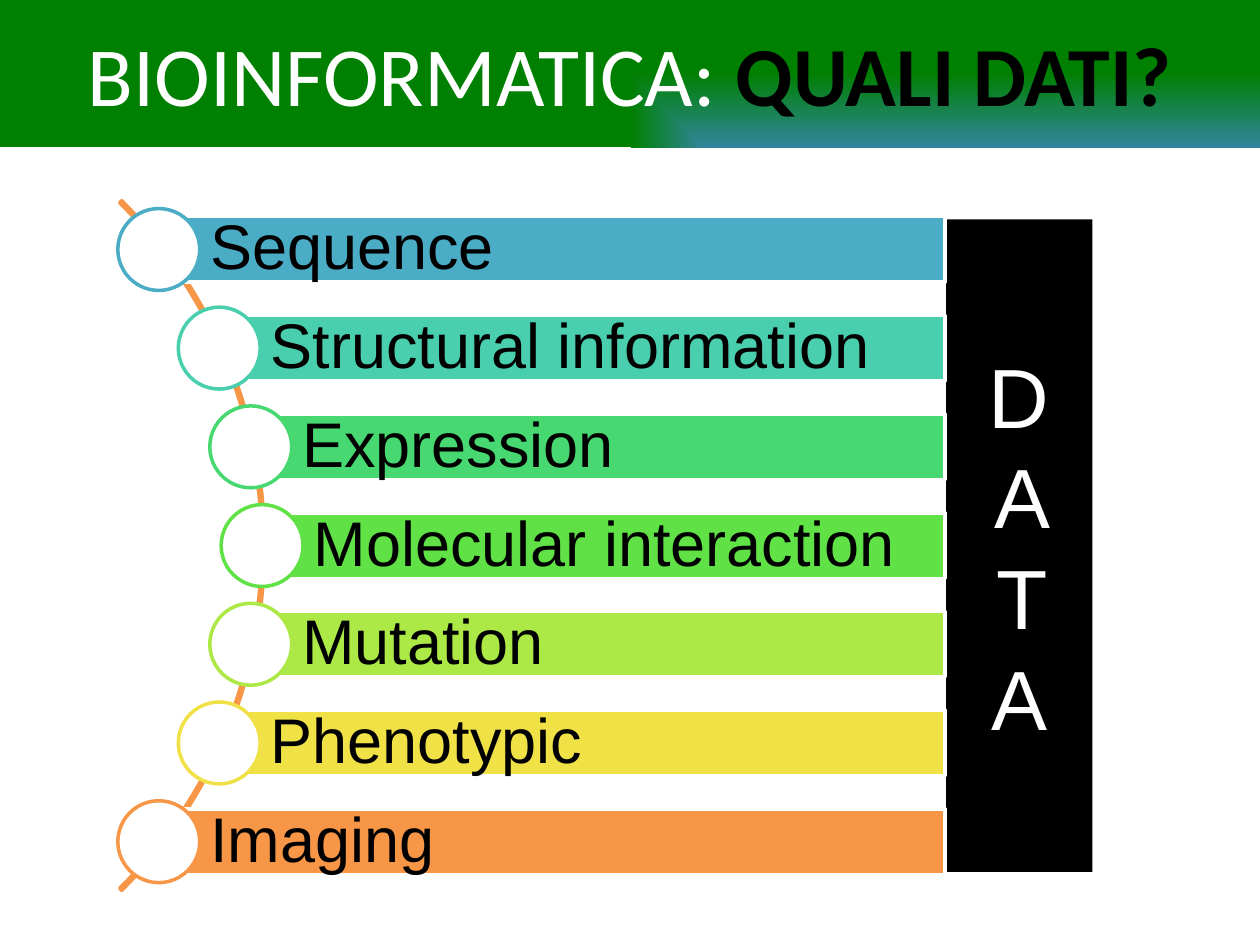
from pptx import Presentation
from pptx.util import Inches, Pt
from pptx.dml.color import RGBColor
from pptx.enum.shapes import MSO_SHAPE
from pptx.enum.text import MSO_ANCHOR, PP_ALIGN
from pptx.oxml import parse_xml
from pptx.oxml.ns import nsdecls, qn

RECT, OVAL, ARC = MSO_SHAPE.RECTANGLE, MSO_SHAPE.OVAL, MSO_SHAPE.BLOCK_ARC
MIDDLE = MSO_ANCHOR.MIDDLE
CENTER, LEFT = PP_ALIGN.CENTER, PP_ALIGN.LEFT

WHITE = RGBColor(0xFF, 0xFF, 0xFF)
BLACK = RGBColor(0x00, 0x00, 0x00)
TEAL = RGBColor(0x31, 0x85, 0x9C)
GREEN = RGBColor(0x00, 0x80, 0x00)
ORANGE = RGBColor(0xF7, 0x96, 0x46)

W, H = 10, 7.5
ROW_TOP, ROW_STEP = 1.98, 4.7 / 6
BAR_RIGHT, BAR_H, DOT = 7.5, 0.52, 0.65
ARC_D = 7.74

ROWS = [
    ("Sequence", 1.26, RGBColor(0x4B, 0xAC, 0xC6)),
    ("Structural information", 1.74, RGBColor(0x49, 0xCF, 0xAE)),
    ("Expression", 1.99, RGBColor(0x47, 0xD8, 0x72)),
    ("Molecular interaction", 2.08, RGBColor(0x60, 0xE1, 0x46)),
    ("Mutation", 1.99, RGBColor(0xAC, 0xE9, 0x46)),
    ("Phenotypic", 1.74, RGBColor(0xF0, 0xE1, 0x46)),
    ("Imaging", 1.26, ORANGE),
]


def add_shape(shapes, kind, box, fill=None, line=None):
    sp = shapes.add_shape(kind, *[Inches(v) for v in box])
    sp.shadow.inherit = False
    if fill is None:
        sp.fill.background()
    else:
        sp.fill.solid()
        sp.fill.fore_color.rgb = fill
    if line is None:
        sp.line.fill.background()
    else:
        sp.line.color.rgb = line
        sp.line.width = Pt(2)
    return sp


def add_text(sp, runs, align, font):
    tf = sp.text_frame
    tf.word_wrap = True
    tf.vertical_anchor = MIDDLE
    p = tf.paragraphs[0]
    p.alignment = align
    for text, color, bold in runs:
        r = p.add_run()
        r.text = text
        r.font.color.rgb = color
        for name, value in {**font, "bold": bold}.items():
            setattr(r.font, name, value)
    return tf


prs = Presentation()
prs.slide_width, prs.slide_height = Inches(W), Inches(H)
s = prs.slides.add_slide(prs.slide_layouts[6])

title = add_shape(s.shapes, RECT, (0, -0.02, W, 1.19), GREEN)
solid = title._element.spPr.find(qn("a:solidFill"))
title._element.spPr.replace(solid, parse_xml(
    f'<a:gradFill {nsdecls("a")} rotWithShape="1"><a:gsLst>'
    f'<a:gs pos="0"><a:srgbClr val="{TEAL}"/></a:gs>'
    f'<a:gs pos="100000"><a:srgbClr val="{GREEN}"/></a:gs></a:gsLst>'
    '<a:path path="rect"><a:fillToRect l="100000" t="100000"/></a:path>'
    '</a:gradFill>'))
add_text(title, [("BIOINFORMATICA: ", WHITE, False), ("QUALI DATI?", BLACK, True)],
         CENTER, {"name": "Calibri", "size": Pt(48)})

data = add_shape(s.shapes, RECT, (7.51, 1.74, 1.16, 5.18), BLACK)
tf = add_text(data, [("DATA", WHITE, False)], CENTER, {"name": "Arial", "size": Pt(48)})
tf._txBody.bodyPr.set("vert", "wordArtVert")

group = s.shapes.add_group_shape()
mid = ROW_TOP + 3 * ROW_STEP
arc = add_shape(group.shapes, ARC, (-5.64, mid - ARC_D / 2, ARC_D, ARC_D), line=ORANGE)
for i, value in enumerate((189, 27, 0.003)):
    arc.adjustments[i] = value

for i, (label, left, color) in enumerate(ROWS):
    y = ROW_TOP + i * ROW_STEP
    bar = add_shape(group.shapes, RECT,
                    (left, y - BAR_H / 2, BAR_RIGHT - left, BAR_H), color, WHITE)
    tf = add_text(bar, [(label, BLACK, False)], LEFT, {"name": "Arial", "size": Pt(36)})
    tf.paragraphs[0].line_spacing = 0.9
    insets = {"margin_left": 0.41, "margin_top": 0.1,
              "margin_right": 0.1, "margin_bottom": 0.1}
    for name, value in insets.items():
        setattr(tf, name, Inches(value))
    add_shape(group.shapes, OVAL, (left - DOT / 2, y - DOT / 2, DOT, DOT), WHITE, color)

prs.save("out.pptx")
